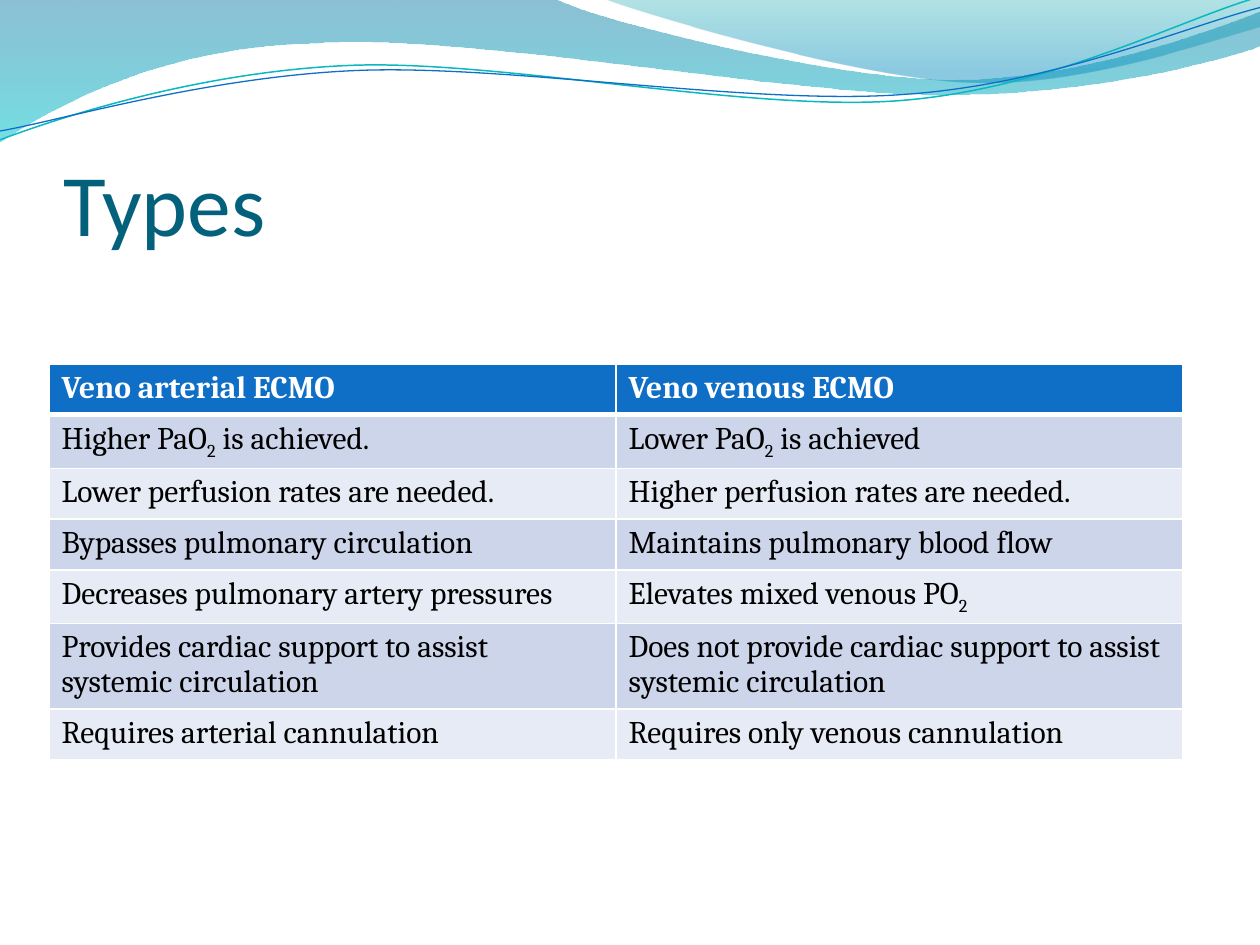
from dataclasses import dataclass

from lxml import etree
from pptx import Presentation
from pptx.dml.color import RGBColor
from pptx.enum.text import MSO_ANCHOR
from pptx.oxml.ns import qn
from pptx.util import Cm, Pt

BOTTOM = MSO_ANCHOR.BOTTOM


@dataclass(frozen=True)
class Theme:
    title_font: str = "Calibri"
    body_font: str = "Cambria"
    title_size: float = 50
    body_size: float = 18
    body_spacing: float = 0.96
    title: str = "04617B"
    header: str = "0F6FC6"
    odd_row: str = "CCD5EA"
    even_row: str = "E7EBF5"
    light: str = "FFFFFF"
    dark: str = "000000"
    wave_stops: tuple = ((0, "0074A1", 45), (1, "00C6CF", 55))
    crest_stops: tuple = ((0, "00A1A9", 30), (0.8, "008BBF", 45))
    teal_line: tuple = ("0AB8BF", 0.85)
    blue_line: tuple = ("0F6FC6", 0.75)


THEME = Theme()

WAVE = [(0, 0), (440, -1), (476, 17, 664, 63, 758, 63),
        (853, 63, 958, 26, 1000, 9), (1001, 36),
        (983, 44, 870, 76, 746, 75), (622, 75, 382, 28, 257, 34),
        (129, 36, 46, 83, -1, 113)]
CREST = [(479, -1), (509, 11, 682, 62, 769, 65),
         (856, 69, 961, 32, 1000, 21), (1000, 0)]
TEAL_CURVE = [(0, 111), (48, 93, 158, 57, 277, 52),
              (395, 47, 593, 89, 713, 80), (833, 71, 938, 15, 998, -2)]
BLUE_CURVE = [(0, 104), (47, 96, 164, 61, 283, 56),
              (403, 51, 597, 84, 717, 75), (836, 67, 941, 21, 1000, 6)]

ROWS = [
    ("Veno arterial ECMO", "Veno venous ECMO"),
    ("Higher PaO|2| is achieved.", "Lower PaO|2| is achieved"),
    ("Lower perfusion rates are needed.", "Higher perfusion rates are needed."),
    ("Bypasses pulmonary circulation", "Maintains pulmonary blood flow"),
    ("Decreases pulmonary artery pressures", "Elevates mixed venous PO|2"),
    ("Provides cardiac support to assist systemic circulation",
     "Does not provide cardiac support to assist systemic circulation"),
    ("Requires arterial cannulation", "Requires only venous cannulation"),
]


def rgb(value):
    return RGBColor.from_string(value)


def apply(target, values):
    for name, value in values.items():
        setattr(target, name, value)


def add_runs(p, text, color, **font):
    for i, part in enumerate(text.split("|")):
        r = p.add_run()
        r.text = part
        apply(r.font, font)
        r.font.color.rgb = rgb(color)
        if i % 2:
            r.font._element.set("baseline", "-25000")


def bend(s, outline):
    lines = iter(list(s._element.iter(qn("a:lnTo"))))
    for step in outline[1:]:
        group = [next(lines) for _ in range(len(step) // 2)]
        if len(group) == 3:
            curve = etree.Element(qn("a:cubicBezTo"))
            group[0].addprevious(curve)
            for line in group:
                curve.append(line[0])
                line.getparent().remove(line)


def add_outline(slide, box, outline, close):
    left, top, width, _ = box
    points = [(left + step[i] * width / 1000, top + step[i + 1] * width / 1000)
              for step in outline for i in range(0, len(step), 2)]
    builder = slide.shapes.build_freeform(*points[0])
    builder.add_line_segments(points[1:], close=close)
    s = builder.convert_to_shape()
    s.shadow.inherit = False
    bend(s, outline)
    return s


def add_band(slide, box, outline, stops):
    s = add_outline(slide, box, outline, True)
    s.line.fill.background()
    s.fill.gradient()
    s.fill.gradient_angle = 270
    for stop, (position, color, _) in zip(s.fill.gradient_stops, stops):
        stop.position = position
        stop.color.rgb = rgb(color)
    for gs, (_, _, opacity) in zip(s._element.spPr.iter(qn("a:gs")), stops):
        etree.SubElement(gs[0], qn("a:alpha"), val=str(opacity * 1000))


def add_curve(slide, box, outline, style):
    color, width = style
    s = add_outline(slide, box, outline, False)
    s.fill.background()
    s.line.color.rgb = rgb(color)
    s.line.width = Pt(width)


def add_banner(slide, box):
    add_band(slide, box, WAVE, THEME.wave_stops)
    add_band(slide, box, CREST, THEME.crest_stops)
    add_curve(slide, box, TEAL_CURVE, THEME.teal_line)
    add_curve(slide, box, BLUE_CURVE, THEME.blue_line)


def add_title(slide, box, text):
    tf = slide.shapes.add_textbox(*box).text_frame
    apply(tf, {"word_wrap": True, "vertical_anchor": BOTTOM, "margin_left": 0,
               "margin_top": Cm(0.13), "margin_right": 0, "margin_bottom": 0})
    add_runs(tf.paragraphs[0], text, THEME.title,
             name=THEME.title_font, size=Pt(THEME.title_size))


def add_borders(cell, top, bottom):
    tc_pr = cell._tc.get_or_add_tcPr()
    for side, width in (("L", 1), ("R", 1), ("T", top), ("B", bottom)):
        ln = etree.SubElement(tc_pr, qn(f"a:ln{side}"), w=str(int(Pt(width))))
        fill = etree.SubElement(ln, qn("a:solidFill"))
        etree.SubElement(fill, qn("a:srgbClr"), val=THEME.light)


def add_comparison(slide, box, rows):
    table = slide.shapes.add_table(len(rows), len(rows[0]), *box).table
    for i, texts in enumerate(rows):
        header = i == 0
        band = THEME.odd_row if i % 2 else THEME.even_row
        for j, text in enumerate(texts):
            cell = table.cell(i, j)
            add_borders(cell, 3 if i == 1 else 1, 3 if header else 1)
            cell.fill.solid()
            cell.fill.fore_color.rgb = rgb(THEME.header if header else band)
            p = cell.text_frame.paragraphs[0]
            p.line_spacing = THEME.body_spacing
            add_runs(p, text, THEME.light if header else THEME.dark,
                     name=THEME.body_font, size=Pt(THEME.body_size), bold=header)


def main():
    prs = Presentation()
    apply(prs, {"slide_width": Cm(25.4), "slide_height": Cm(19.05)})
    slide = prs.slides.add_slide(prs.slide_layouts[6])
    add_banner(slide, (0, 0, prs.slide_width, Cm(2.87)))
    add_title(slide, (Cm(1.28), Cm(1.95), Cm(22.86), Cm(3.17)), "Types")
    add_comparison(slide, (Cm(0.99), Cm(7.34), Cm(22.86), Cm(7.14)), ROWS)
    prs.save("out.pptx")


if __name__ == "__main__":
    main()
